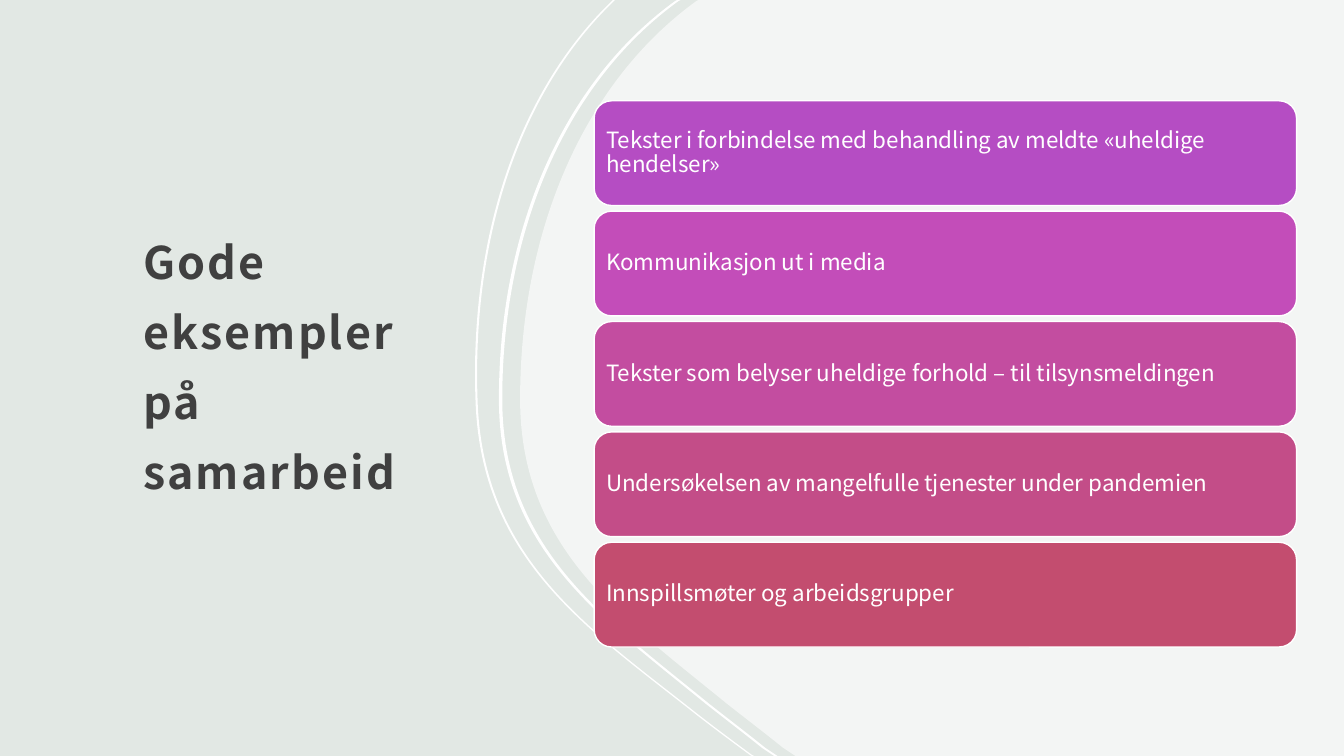
from lxml.etree import Element, SubElement
from pptx import Presentation
from pptx.dml.color import RGBColor
from pptx.enum.shapes import MSO_SHAPE as Shape
from pptx.enum.text import MSO_ANCHOR as Anchor, PP_ALIGN as Align
from pptx.oxml.ns import qn
from pptx.util import Pt

FONT = "Noto Sans CJK JP"
COLORS = {"background": "E2E8E4", "white": "FFFFFF", "title": "404040"}
CARDS = [
    ("Tekster i forbindelse med behandling av meldte «uheldige hendelser»", "B54DC3"),
    ("Kommunikasjon ut i media", "C34DB9"),
    ("Tekster som belyser uheldige forhold – til tilsynsmeldingen", "C34DA0"),
    ("Undersøkelsen av mangelfulle tjenester under pandemien", "C34D88"),
    ("Innspillsmøter og arbeidsgrupper", "C34D6F"),
]

# Each edge runs downwards: a line, three Bézier curves, a line
PANEL_EDGE = [
    (499, 0), (497.5, 0.7),
    (416.9, 59), (371.5, 164.9), (371.5, 285.1),
    (371.5, 391.7), (444.2, 441.4), (519.1, 502.6),
    (532.8, 513.4), (546.5, 523.8), (559.4, 534.2),
    (568.1, 540),
]
OUTER_EDGE = [
    (437.8, 0), (435.6, 2.2),
    (368.6, 67.7), (334.8, 172.8), (339.8, 289.4),
    (344.9, 399.6), (419, 448.6), (494.6, 508.3),
    (508.3, 519.1), (522, 529.2), (535.7, 539.3),
    (537.1, 540),
]


def rgb(value):
    return RGBColor.from_string(value)


def shift(edge, offset):
    return [(x + offset, y) for x, y in edge]


def edge_steps(edge):
    """Split an edge into steps of one point (line) or three (curve)."""
    cuts = (0, 1, 2, 5, 8, 11, 12)
    return [edge[start:end] for start, end in zip(cuts, cuts[1:])]


def band_steps(edge, width):
    return edge_steps(edge) + edge_steps(shift(edge, width)[::-1])


def add_outline(page, left, top, steps):
    steps = [[(Pt(left + x), Pt(top + y)) for x, y in step] for step in steps]
    ends = [step[-1] for step in steps]
    builder = page.shapes.build_freeform(*ends[0], scale=1.0)
    builder.add_line_segments(ends[1:], close=True)
    outline = builder.convert_to_shape()

    # Give the curved steps their control points
    segments = list(outline._element.iter(qn("a:lnTo")))
    for segment, step in zip(segments, steps[1:]):
        if len(step) == 3:
            segment.tag = qn("a:cubicBezTo")
            for place, (x, y) in enumerate(step[:2]):
                control = Element(qn("a:pt"), x=str(x - outline.left), y=str(y - outline.top))
                segment.insert(place, control)

    outline.shadow.inherit = False
    outline.fill.solid()
    outline.fill.fore_color.rgb = rgb(COLORS["white"])
    outline.line.fill.background()
    return outline


def write_text(box, text, size, color, spacing, insets):
    frame = box.text_frame
    frame.word_wrap = True
    frame.vertical_anchor = Anchor.MIDDLE
    (frame.margin_left, frame.margin_top,
     frame.margin_right, frame.margin_bottom) = map(Pt, insets)
    para = frame.paragraphs[0]
    para.text = text
    para.alignment = Align.LEFT
    para.line_spacing = spacing
    para.font.name = FONT
    para.font.size = Pt(size)
    para.font.color.rgb = rgb(color)
    return para


def draw_backdrop(page, left, top, width, height):
    # Pale panel reaching the right side
    corners = [[(width, height)], [(width, 0)]]
    panel = add_outline(page, left, top, edge_steps(PANEL_EDGE) + corners)
    color = panel._element.spPr.find(qn("a:solidFill"))[0]
    SubElement(color, qn("a:alpha"), val="60000")

    # Two thin white arcs
    add_outline(page, left, top, band_steps(OUTER_EDGE, 1.5))
    add_outline(page, left, top, band_steps(shift(PANEL_EDGE, -15.1), 2.4))


def draw_title(page, left, top, width, height):
    box = page.shapes.add_textbox(Pt(left), Pt(top), Pt(width), Pt(height))
    para = write_text(box, "Gode eksempler på samarbeid", 32, COLORS["title"],
                      1.3, (8.6, 8.6, 8.6, 7.2))
    para.font.bold = True
    para.font._element.set("spc", "150")


def draw_cards(page, left, top, width, height, gap=4):
    card_height = (height - gap * (len(CARDS) - 1)) / len(CARDS)
    for row, (text, color) in enumerate(CARDS):
        card = page.shapes.add_shape(
            Shape.ROUNDED_RECTANGLE, Pt(left), Pt(top + row * (card_height + gap)),
            Pt(width), Pt(card_height))
        card.shadow.inherit = False
        card.fill.solid()
        card.fill.fore_color.rgb = rgb(color)
        card.line.color.rgb = rgb(COLORS["white"])
        card.line.width = Pt(1)
        write_text(card, text, 16, COLORS["white"], 0.9, (5, 5, 5, 5))


def main():
    deck = Presentation()
    deck.slide_width, deck.slide_height = Pt(960), Pt(540)
    page = deck.slides.add_slide(deck.slide_layouts[6])
    page.background.fill.solid()
    page.background.fill.fore_color.rgb = rgb(COLORS["background"])

    draw_backdrop(page, 0, 0, 960, 540)
    draw_title(page, 93.6, 87.1, 237.6, 337)
    draw_cards(page, 424.4, 72, 501.8, 390.2)
    deck.save("out.pptx")


if __name__ == "__main__":
    main()
